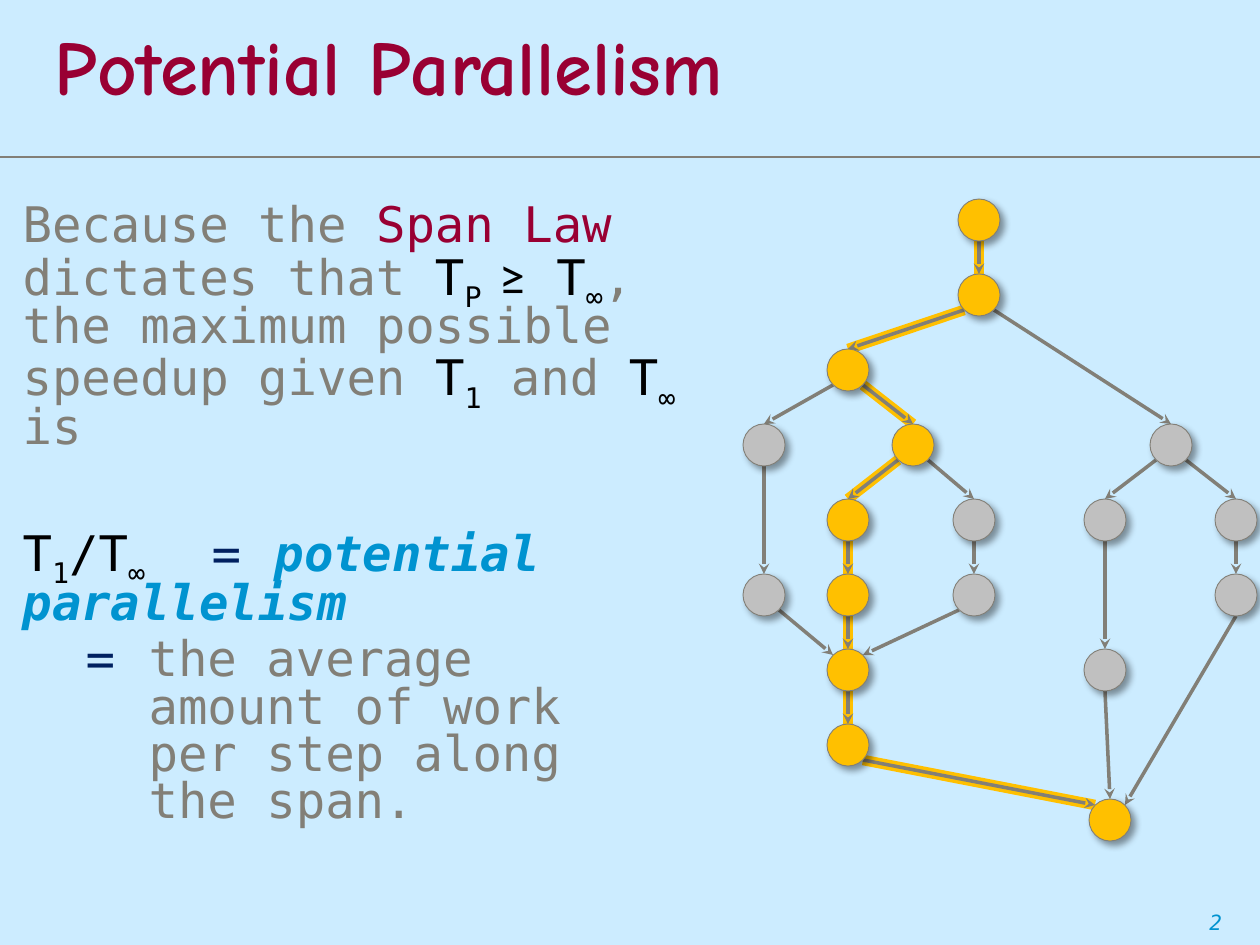
from lxml.etree import SubElement
from pptx import Presentation
from pptx.dml.color import RGBColor
from pptx.enum.shapes import MSO_CONNECTOR, MSO_SHAPE
from pptx.enum.text import MSO_ANCHOR, MSO_AUTO_SIZE, PP_ALIGN
from pptx.oxml.ns import qn
from pptx.util import Emu, Pt

SCALE = 914400 / 126  # EMU in one px
GREY, RED, BLACK, NAVY, BLUE = "827F77", "990033", "000000", "002060", "0093D0"
GOLD, SILVER = "FFC000", "C0C0C0"
MONO = "DejaVu Sans Mono"


def px(*lengths):
    return [Emu(round(length * SCALE)) for length in lengths]


def color(target, value):
    """Give a fill, line or font one hex colour."""
    if hasattr(target, "solid"):
        target.solid()
        target.fore_color.rgb = RGBColor.from_string(value)
    else:
        target.color.rgb = RGBColor.from_string(value)


deck = Presentation()
deck.slide_width, deck.slide_height = px(1260, 945)
page = deck.slides.add_slide(deck.slide_layouts[1])
color(page.background.fill, "CCECFF")

# Title
title = page.shapes.title
title.left, title.top, title.width, title.height = px(42, 9, 1218, 126)
title.text_frame.vertical_anchor = MSO_ANCHOR.MIDDLE
title.text_frame.auto_size = MSO_AUTO_SIZE.NONE
para = title.text_frame.paragraphs[0]
para.alignment = PP_ALIGN.LEFT
para.line_spacing = 0.86
span = para.add_run()
span.text = "Potential Parallelism"
span.font.name, span.font.size, span.font.bold = "Comic Neue", Pt(44), True
color(span.font, RED)

# Body: each paragraph is its space before and its runs (text, colour, subscript)
paragraphs = [
    (5.6, [("Because the ", GREY, False), ("Span Law ", RED, False),
           ("dictates that", GREY, False), (" T", BLACK, False), ("P ", BLACK, True),
           ("≥", BLACK, False), (" T", BLACK, False), ("∞", BLACK, True),
           (", the maximum possible speedup given ", GREY, False),
           ("T", BLACK, False), ("1", BLACK, True), (" and ", GREY, False),
           ("T", BLACK, False), ("∞ ", BLACK, True), ("is", GREY, False)]),
    (43, [("T", BLACK, False), ("1", BLACK, True), ("/T", BLACK, False),
          ("∞ \t", BLACK, True), ("=\t", NAVY, False),
          ("potential parallelism", BLUE, False)]),
    (5.6, [("\t=\t", NAVY, False),
           ("the average\n\t\tamount of work\n\t\tper step along\n\t\tthe span.", GREY, False)]),
]
body = page.placeholders[1]
body.left, body.top, body.width, body.height = px(10, 199, 747, 528)
frame = body.text_frame
frame.auto_size = MSO_AUTO_SIZE.NONE
for index, (space, runs) in enumerate(paragraphs):
    para = frame.add_paragraph() if index else frame.paragraphs[0]
    para.line_spacing, para.space_before = 0.8, Pt(space)
    properties = para._p.get_or_add_pPr()
    properties.set("marL", "0")
    properties.set("indent", "0")
    SubElement(properties, qn("a:buNone"))
    tabs = SubElement(properties, qn("a:tabLst"))
    for stop in px(63, 126, 189, 252):
        SubElement(tabs, qn("a:tab"), pos=str(stop), algn="l")
    for text, shade, subscript in runs:
        for row, line in enumerate(text.split("\n")):
            if row:
                para.add_line_break()
            span = para.add_run()
            span.text = line
            span.font.name = "Lato" if line == "≥" else MONO
            span.font.size = Pt(28)
            span.font.bold = span.font.italic = shade == BLUE
            color(span.font, shade)
            if subscript:
                span._r.get_or_add_rPr().set("baseline", "-25000")

# Graph nodes: centre x, row, on the critical path
nodes = {
    "start": (979, 0, True), "fork": (979, 1, True), "left": (848, 2, True),
    "far left": (764, 3, False), "inner": (913, 3, True), "right": (1171, 3, False),
    "spine 1": (848, 4, True), "branch 1": (974, 4, False),
    "right a1": (1105, 4, False), "right b1": (1236, 4, False),
    "far left 2": (764, 5, False), "spine 2": (848, 5, True),
    "branch 2": (974, 5, False), "right b2": (1236, 5, False),
    "join": (848, 6, True), "right a2": (1105, 6, False),
    "after join": (848, 7, True), "end": (1110, 8, True),
}
# Points on a node's rim, from its centre
rim = {"N": (0, -21), "S": (0, 21), "NW": (-15, -15), "NE": (15, -15),
       "SW": (-15, 15), "SE": (15, 15)}
critical = [
    ("start", "S", "fork", "N"), ("fork", "SW", "left", "N"),
    ("left", "SE", "inner", "N"), ("inner", "SW", "spine 1", "N"),
    ("spine 1", "S", "spine 2", "N"), ("spine 2", "S", "join", "N"),
    ("join", "S", "after join", "N"), ("after join", "SE", "end", "NW"),
]
others = [
    ("fork", "SE", "right", "N"), ("left", "SW", "far left", "N"),
    ("far left", "S", "far left 2", "N"), ("inner", "SE", "branch 1", "N"),
    ("far left 2", "SE", "join", "NW"), ("right", "SE", "right b1", "N"),
    ("branch 2", "SW", "join", "NE"), ("branch 1", "S", "branch 2", "N"),
    ("right", "SW", "right a1", "N"), ("right a1", "S", "right a2", "N"),
    ("right b1", "S", "right b2", "N"), ("right b2", "S", "end", "NE"),
    ("right a2", "S", "end", "N"),
]

# Lines from back to front: title rule, critical path bands, arrows
lines = [((0, 157, 1260, 157), GREY, 0.75, False)]
for edges, shade, weight, arrow in ((critical, GOLD, 6, False),
                                    (critical + others, GREY, 2, True)):
    for source, leave, target, enter in edges:
        ends = []
        for name, side in ((source, leave), (target, enter)):
            x, row, _ = nodes[name]
            ends += [x + rim[side][0], 220 + 75 * row + rim[side][1]]
        lines.append((ends, shade, weight, arrow))
for ends, shade, weight, arrow in lines:
    connector = page.shapes.add_connector(MSO_CONNECTOR.STRAIGHT, *px(*ends))
    color(connector.line.fill, shade)
    connector.line.width = Pt(weight)
    outline = connector._element.spPr
    if arrow:
        SubElement(outline.find(qn("a:ln")), qn("a:tailEnd"), type="stealth")
    SubElement(outline, qn("a:effectLst"))

# Node circles with a soft shadow
for x, row, on_path in nodes.values():
    circle = page.shapes.add_shape(MSO_SHAPE.OVAL, *px(x - 21, 199 + 75 * row, 42, 42))
    color(circle.fill, GOLD if on_path else SILVER)
    color(circle.line.fill, GREY)
    circle.line.width = Pt(0.5)
    circle.shadow.inherit = False
    effects = circle._element.spPr.find(qn("a:effectLst"))
    shadow = SubElement(effects, qn("a:outerShdw"), blurRad=str(Pt(4)), dist=str(Pt(3)),
                        dir="2700000", algn="tl", rotWithShape="0")
    black = SubElement(shadow, qn("a:srgbClr"), val=BLACK)
    SubElement(black, qn("a:alpha"), val="40000")

# Page number
box = page.shapes.add_textbox(*px(0, 903, 1260, 38))
box.text_frame.word_wrap = True
box.text_frame.vertical_anchor = MSO_ANCHOR.BOTTOM
box.text_frame.margin_right = px(38)[0]
para = box.text_frame.paragraphs[0]
para.alignment = PP_ALIGN.RIGHT
span = para.add_run()
span.text = "2"
span.font.name, span.font.size, span.font.italic = MONO, Pt(12), True
color(span.font, BLUE)

deck.save("out.pptx")
